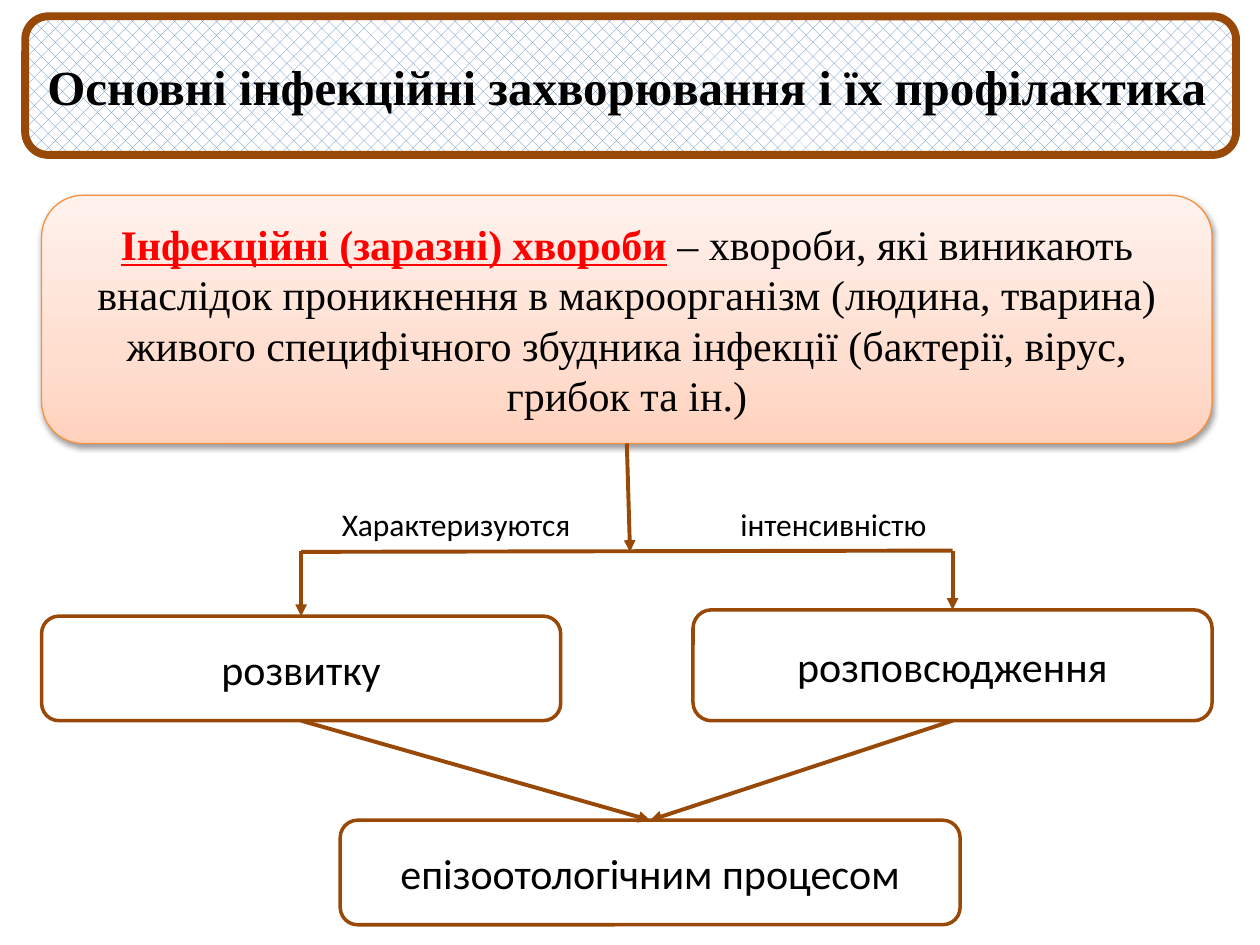
"""Builds a slide on infectious diseases and their prevention."""
import copy
import pptx
import pptx.util
import pptx.dml.color
import pptx.enum.dml
import pptx.enum.shapes
import pptx.enum.text
import pptx.oxml
import pptx.oxml.ns
from lxml import etree

Inches, Pt = pptx.util.Inches, pptx.util.Pt
RGBColor = pptx.dml.color.RGBColor
qn = pptx.oxml.ns.qn
BROWN = RGBColor(0x98, 0x48, 0x07)
ORANGE = RGBColor(0xF6, 0x92, 0x40)
BLUE = RGBColor(0x4F, 0x81, 0xBD)
RED = RGBColor(0xFF, 0, 0)
BLACK = RGBColor(0, 0, 0)
WHITE = RGBColor(0xFF, 0xFF, 0xFF)
PEACH = [(0, RGBColor(0xFF, 0xD2, 0xBD)), (0.35, RGBColor(0xFF, 0xDE, 0xD0)),
         (1, RGBColor(0xFF, 0xF2, 0xED))]

deck = pptx.Presentation()
deck.slide_width, deck.slide_height = Inches(10), Inches(7.5)
slide = deck.slides.add_slide(deck.slide_layouts[6])
shapes = slide.shapes


def write(shape, runs, size, face="Calibri"):
    """Centre the runs in the shape."""
    frame = shape.text_frame
    frame.word_wrap = True
    frame.vertical_anchor = pptx.enum.text.MSO_ANCHOR.MIDDLE
    para = frame.paragraphs[0]
    para.alignment = pptx.enum.text.PP_ALIGN.CENTER
    para.font.size, para.font.name = Pt(size), face
    para.font.color.rgb = BLACK
    for words in runs:
        para.add_run().text = words
    return para.runs


def add_box(x, y, w, h, color, width):
    """Add an unfilled rounded box."""
    box = shapes.add_shape(pptx.enum.shapes.MSO_SHAPE.ROUNDED_RECTANGLE,
                           Inches(x), Inches(y), Inches(w), Inches(h))
    box.shadow.inherit = False
    box.fill.background()
    box.line.color.rgb = color
    box.line.width = Pt(width)
    return box


title = add_box(0.2, 0.13, 9.61, 1.1, BROWN, 4.5)
title.fill.patterned()
title.fill.pattern = pptx.enum.dml.MSO_PATTERN.PERCENT_25
title.fill.fore_color.rgb = BLUE
title.fill.back_color.rgb = WHITE
head, dot = write(title, ["Основні інфекційні захворювання і їх профілактика", "."],
                  28, "Times New Roman")
head.font.bold = True
dot.font.size, dot.font.name = Pt(18), "Calibri"
dot.font.color.rgb = WHITE

define = add_box(0.33, 1.55, 9.29, 1.97, ORANGE, 0.75)
define.fill.gradient()
define.fill.gradient_angle = 90
stops = define._element.spPr.find(qn("a:gradFill")).find(qn("a:gsLst"))
stops.append(copy.deepcopy(stops[-1]))
for stop, (place, color) in zip(define.fill.gradient_stops, PEACH):
    stop.position = place
    stop.color.rgb = color
define._element.spPr.find(qn("a:effectLst")).append(pptx.oxml.parse_xml(
    '<a:outerShdw xmlns:a="http://schemas.openxmlformats.org/drawingml/2006/main"'
    ' blurRad="40000" dist="20000" dir="5400000" rotWithShape="0">'
    '<a:srgbClr val="000000"><a:alpha val="38000"/></a:srgbClr></a:outerShdw>'))
term = write(define, [
    "Інфекційні (заразні) хвороби",
    "\u00a0– хвороби, які виникають внаслідок проникнення в\u00a0макроорганізм "
    "(людина, тварина) живого специфічного збудника інфекції "
    "(бактерії, вірус, грибок та ін.)"], 24, "Times New Roman")[0]
term.font.bold = term.font.underline = True
term.font.color.rgb = RED

boxes = []
for words, x, y, w, h in [("розвитку", 0.33, 4.89, 4.12, 0.83),
                          ("розповсюдження", 5.5, 4.84, 4.12, 0.88),
                          ("епізоотологічним процесом", 2.7, 6.51, 4.92, 0.83)]:
    box = add_box(x, y, w, h, BROWN, 2)
    write(box, [words], 24)
    boxes.append(box)
growth, spread, process = boxes

for words, x, y, w, h in [("Характеризуются", 1.61, 3.94, 4.02, 0.43),
                          ("інтенсивністю", 5.16, 3.95, 2.91, 0.42)]:
    label = shapes.add_textbox(Inches(x), Inches(y), Inches(w), Inches(h))
    write(label, [words], 18)

for start, end, source, target, arrow in [
        ((4.98, 3.52), (5, 4.38), define, None, True),
        ((2.39, 4.38), (7.56, 4.37), None, None, False),
        ((2.39, 4.37), (2.39, 4.89), None, growth, True),
        ((7.56, 4.37), (7.56, 4.84), None, spread, True),
        ((2.39, 5.72), (5.16, 6.51), growth, process, True),
        ((7.56, 5.72), (5.16, 6.51), spread, process, True)]:
    link = shapes.add_connector(pptx.enum.shapes.MSO_CONNECTOR.STRAIGHT,
                                *map(Inches, start + end))
    if source:
        link.begin_connect(source, 2)
    if target:
        link.end_connect(target, 0)
    link.line.color.rgb = BROWN
    link.line.width = Pt(2.25)
    if arrow:
        etree.SubElement(link.line._get_or_add_ln(), qn("a:tailEnd"), type="triangle")
    etree.SubElement(link._element.spPr, qn("a:effectLst"))

deck.save("out.pptx")
